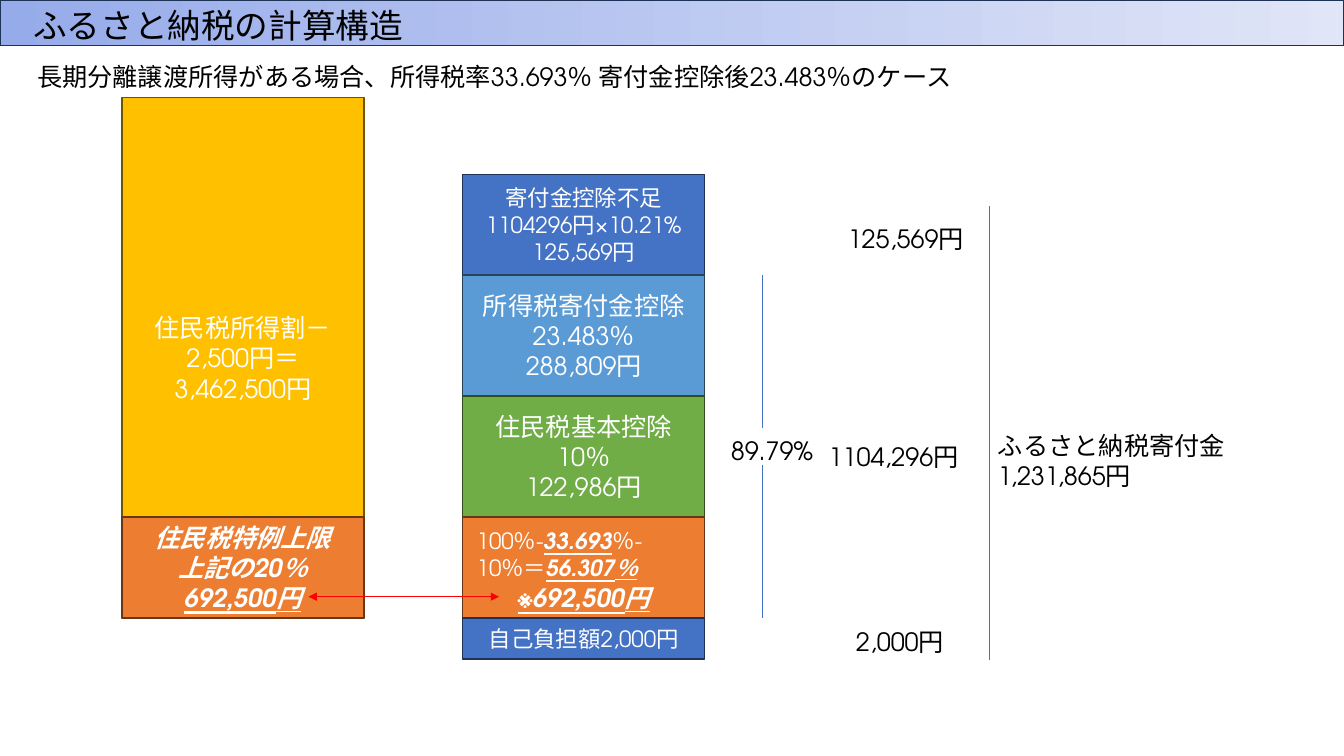
from lxml.etree import SubElement
from pptx import Presentation
from pptx.dml.color import RGBColor
from pptx.enum.shapes import MSO_CONNECTOR, MSO_SHAPE
from pptx.enum.text import MSO_ANCHOR, MSO_AUTO_SIZE, PP_ALIGN
from pptx.oxml.ns import qn
from pptx.util import Inches, Pt

COLORS = {
    "black": "000000", "white": "FFFFFF", "red": "FF0000",
    "gold": "FFC000", "gold_edge": "705400",
    "orange": "ED7D31", "orange_edge": "683715",
    "blue": "4472C4", "blue_edge": "1E3256",
    "green": "70AD47", "green_edge": "314C1F",
    "sky": "5B9BD5", "sky_edge": "28445D",
    "banner_start": "96ABEA", "banner_end": "E0E5F7",
}
LATIN_FONT = "TeX Gyre Adventor"
JAPANESE_FONT = "Noto Sans CJK JP"
WIDTH, HEIGHT = Inches(13.33), Inches(7.5)
COLUMNS, ROWS = 133.3, 75


def color(name):
    return RGBColor.from_string(COLORS[name])


def plain(*lines):
    return [[(text, "")] for text in lines]


class TaxSlide:
    """Places elements on a grid of columns and rows."""

    def __init__(self, deck):
        self.page = deck.slides.add_slide(deck.slide_layouts[5])

    def across(self, columns):
        return round(WIDTH * columns / COLUMNS)

    def down(self, rows):
        return round(HEIGHT * rows / ROWS)

    def place(self, left, top, width, height):
        return self.across(left), self.down(top), self.across(width), self.down(height)

    def add_text(self, box, paras, ink, size, align=PP_ALIGN.LEFT,
                 anchor=MSO_ANCHOR.TOP, font=LATIN_FONT):
        """Each para is a list of (text, emphasis) spans; emphasis holds b, i, u."""
        frame = box.text_frame
        frame.word_wrap = True
        frame.auto_size = MSO_AUTO_SIZE.NONE
        frame.vertical_anchor = anchor
        for index, spans in enumerate(paras):
            para = frame.add_paragraph() if index else frame.paragraphs[0]
            para.alignment = align
            for text, emphasis in spans:
                span = para.add_run()
                span.text = text
                span.font.name = font
                span.font.size = Pt(size)
                span.font.bold = "b" in emphasis
                span.font.italic = "i" in emphasis
                span.font.underline = "u" in emphasis
                span.font.color.rgb = color(ink)
        for properties in box.element.iter(qn("a:rPr")):
            SubElement(properties, qn("a:ea")).set("typeface", JAPANESE_FONT)

    def title(self, text, *area):
        box = self.page.shapes.title
        box.left, box.top, box.width, box.height = self.place(*area)
        self.add_text(box, plain(text), "black", 24, font=JAPANESE_FONT)

    def rectangle(self, area, edge):
        box = self.page.shapes.add_shape(MSO_SHAPE.RECTANGLE, *self.place(*area))
        box.shadow.inherit = False
        box.line.color.rgb = color(edge)
        box.line.width = Pt(1)
        return box

    def banner(self, *area):
        box = self.rectangle(area, "blue_edge")
        box.fill.gradient()
        box.fill.gradient_angle = 0
        ends = ("banner_start", "banner_end")
        for position, (stop, name) in enumerate(zip(box.fill.gradient_stops, ends)):
            stop.color.rgb = color(name)
            stop.position = position
        # The title stands in front of the banner
        self.page.shapes.title.element.addprevious(box.element)

    def block(self, area, fill, paras, size=18, anchor=MSO_ANCHOR.MIDDLE):
        box = self.rectangle(area, fill + "_edge")
        box.fill.solid()
        box.fill.fore_color.rgb = color(fill)
        self.add_text(box, paras, "white", size, PP_ALIGN.CENTER, anchor)

    def label(self, area, paras, ink="black", size=18):
        box = self.page.shapes.add_textbox(*self.place(*area))
        self.add_text(box, paras, ink, size)

    def line(self, left, top, right, bottom, ink="blue", arrows=False):
        line = self.page.shapes.add_connector(
            MSO_CONNECTOR.STRAIGHT, self.across(left), self.down(top),
            self.across(right), self.down(bottom))
        line.line.color.rgb = color(ink)
        line.line.width = Pt(0.5)
        properties = line.element.find(qn("p:spPr"))
        if arrows:
            for end in ("a:headEnd", "a:tailEnd"):
                SubElement(properties.find(qn("a:ln")), qn(end)).set("type", "triangle")
        SubElement(properties, qn("a:effectLst"))


def main():
    deck = Presentation()
    deck.slide_width, deck.slide_height = WIDTH, HEIGHT
    slide = TaxSlide(deck)

    # Heading
    slide.title("ふるさと納税の計算構造", 2.3, 0, 50, 5)
    slide.banner(0, 0, COLUMNS, 4.5)
    slide.label((2.7, 5.6, 116.5, 4), plain(
        "長期分離譲渡所得がある場合、所得税率33.693％ 寄付金控除後23.483％のケース"))

    # Resident tax and the limit of its special deduction
    bar = 24
    limit_top, limit_height = 51.3, 10
    limit_bottom = limit_top + limit_height
    slide.block((12.1, 9.7, bar, limit_bottom - 9.7), "gold",
                plain("住民税所得割－2,500円＝", "3,462,500円"))
    slide.block((12.1, limit_top, bar, limit_height), "orange", [
        [("住民税特例上限", "bi")], [("上記の20％", "bi")], [("692,500円", "biu")]])

    # Breakdown of the donation, stacked downwards
    stack_left, stack_top = 45.9, 17.3
    middle, bottom = MSO_ANCHOR.MIDDLE, MSO_ANCHOR.BOTTOM
    layers = [
        (10, "blue", 16, middle,
         plain("寄付金控除不足", "1104296円×10.21%", "125,569円")),
        (12, "sky", 18, middle, plain("所得税寄付金控除", "23.483％", "288,809円")),
        (12, "green", 18, middle, plain("住民税基本控除10％", "122,986円")),
        (limit_height, "orange", 18, bottom, [[("※692,500円", "biu")]]),
        (4.1, "blue", 16, middle, plain("自己負担額2,000円")),
    ]
    top = stack_top
    for height, fill, size, anchor, paras in layers:
        slide.block((stack_left, top, bar, height), fill, paras, size, anchor)
        top += height
    slide.label((46.3, 51.8, 22.1, 6.4), [[
        ("100％-", ""), ("33.693", "biu"), ("％-10％＝", ""), ("56.307％", "biu")]],
        "white", 16)
    slide.line(30.6, 59.2, 49.5, 59.2, "red", arrows=True)

    # Share covered by deductions
    deduction_top = stack_top + layers[0][0]
    slide.line(75.6, deduction_top, 75.6, 42.5)
    slide.line(75.6, 46.1, 75.6, limit_bottom)

    # Amounts and total
    slide.line(98.1, 20.4, 98.1, 65.5)
    for left, label_top, text in [
            (71.5, 42.7, "89.79%"), (81.2, 43.3, "1104,296円"),
            (83.9, 61.6, "2,000円"), (83.1, 21.7, "125,569円")]:
        slide.label((left, label_top, 20.9, 4), plain(text))
    slide.label((98, 42.2, 26, 10.1), plain("ふるさと納税寄付金", "1,231,865円"))

    deck.save("out.pptx")


if __name__ == "__main__":
    main()
